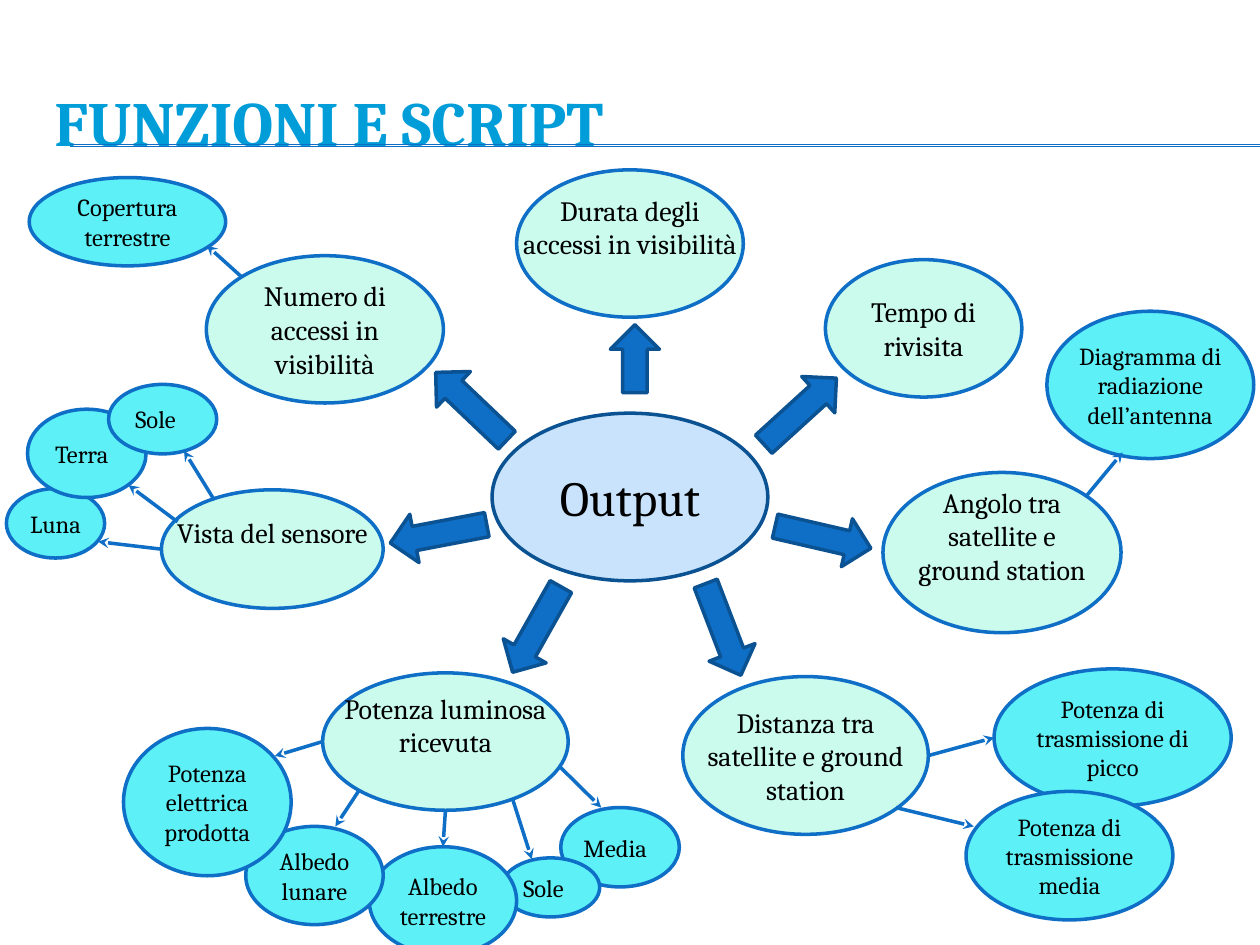
from lxml.etree import SubElement
from pptx import Presentation
from pptx.dml.color import RGBColor
from pptx.enum.shapes import MSO_CONNECTOR, MSO_SHAPE
from pptx.enum.text import MSO_ANCHOR, MSO_AUTO_SIZE, PP_ALIGN
from pptx.oxml.ns import qn
from pptx.util import Cm, Pt

FONT = "Cambria"
BLUE, NAVY = "0F6FC6", "0B5292"
TITLE = "FUNZIONI E SCRIPT"

# kind: fill, outline, text size
KINDS = {
    "hub": ("C8E3FB", NAVY, 28),
    "node": ("CAFBED", BLUE, 16),
    "leaf": ("5EF0F7", BLUE, 14),
}

# text, kind, centre x and y, width, height, label width, label lines (cm)
BUBBLES = [
    ("Luna", "leaf", 1.12, 10.55, 1.98, 1.4, 1.98, 1),
    ("Media", "leaf", 12.5, 17.08, 2.39, 1.6, 1.98, 1),
    ("Terra", "leaf", 1.75, 9.14, 2.39, 1.78, 1.78, 1),
    ("Durata degli accessi in visibilità", "node", 12.7, 4.91, 4.57, 2.97, 4.95, 3),
    ("Output", "hub", 12.7, 10.02, 5.56, 3.38, 4.78, 1),
    ("Numero di accessi in visibilità", "node", 6.55, 6.64, 4.78, 2.97, 4.57, 3),
    ("Tempo di rivisita", "node", 18.62, 6.62, 3.96, 2.77, 3.68, 2),
    ("Angolo tra satellite e ground station", "node", 20.2, 11.14, 4.8, 3.23, 4.27, 4),
    ("Distanza tra satellite e ground station", "node", 16.24, 15.23, 4.95, 3.18, 4.95, 3),
    ("Vista del sensore", "node", 5.49, 11.07, 4.47, 2.39, 4.62, 2),
    ("Potenza luminosa ricevuta", "node", 8.98, 14.95, 4.95, 2.77, 4.95, 3),
    ("Potenza di trasmissione di picco", "leaf", 22.43, 14.87, 4.78, 2.77, 4.17, 3),
    ("Sole", "leaf", 11.1, 17.89, 1.98, 1.19, 1.6, 1),
    ("Sole", "leaf", 3.28, 8.45, 2.18, 1.4, 1.6, 1),
    ("Albedo terrestre", "leaf", 8.93, 18.16, 2.97, 2.18, 3.18, 2),
    ("Albedo lunare", "leaf", 6.34, 17.65, 2.77, 1.98, 3.18, 2),
    ("Potenza di trasmissione media", "leaf", 21.56, 17.25, 4.17, 2.59, 4.17, 3),
    ("Copertura terrestre", "leaf", 2.57, 4.47, 3.96, 1.78, 3.76, 2),
    ("Diagramma di radiazione dell’antenna", "leaf", 23.19, 7.76, 4.17, 2.97, 4.29, 3),
    ("Potenza elettrica prodotta", "leaf", 4.18, 16.17, 3.38, 2.97, 3.58, 3),
]
LEFT = {"Media", "Terra", "Sole"}

# centre x and y, length, clockwise angle
ARROWS = [
    (14.58, 12.69, 1.98, 69),
    (16.59, 10.83, 1.98, 13),
    (16.13, 8.29, 1.98, 317.7),
    (12.8, 7.23, 1.37, 270),
    (9.5, 8.19, 1.98, 223.6),
    (8.84, 10.76, 1.98, 169.2),
    (10.82, 12.69, 1.98, 119.4),
]

# from x and y, to x and y
LINKS = [
    (21.89, 10.01, 22.63, 9.12),
    (18.72, 15.23, 20.04, 14.87),
    (18.06, 16.28, 19.63, 16.66),
    (4.32, 10.08, 3.71, 9.09),
    (3.58, 10.52, 2.59, 9.78),
    (3.25, 11.07, 1.98, 10.92),
    (6.5, 14.95, 5.54, 15.24),
    (7.24, 15.93, 6.76, 16.66),
    (8.98, 16.33, 8.93, 17.07),
    (10.34, 16.13, 10.72, 17.32),
    (11.3, 15.47, 12.12, 16.28),
    (4.88, 5.59, 4.17, 4.95),
]
RULES = [2.92, 2.95]


def paint(color, code):
    color.rgb = RGBColor.from_string(code)


def frame(x, y, w, h):
    """Turn a centre and a size into left, top, width and height."""
    return Cm(x - w / 2), Cm(y - h / 2), Cm(w), Cm(h)


def style(par, size, code):
    par.font.name = FONT
    par.font.size = Pt(size)
    paint(par.font.color, code)


def add_form(slide, kind, box, fill, edge):
    form = slide.shapes.add_shape(kind, *box)
    form.shadow.inherit = False
    form.fill.solid()
    paint(form.fill.fore_color, fill)
    paint(form.line.color, edge)
    form.line.width = Pt(2)
    return form


def add_line(slide, ends, width, head=False):
    line = slide.shapes.add_connector(MSO_CONNECTOR.STRAIGHT, *map(Cm, ends))
    paint(line.line.color, BLUE)
    line.line.width = Pt(width)
    if head:
        SubElement(line.line._get_or_add_ln(), qn("a:tailEnd"), type="stealth")
    SubElement(line._element.spPr, qn("a:effectLst"))


def add_bubble(slide, text, kind, x, y, w, h, span, rows):
    fill, edge, size = KINDS[kind]
    add_form(slide, MSO_SHAPE.OVAL, frame(x, y, w, h), fill, edge)
    tall = 0.25 + rows * Pt(size).cm * 1.2
    label = slide.shapes.add_textbox(*frame(x, y, span, tall)).text_frame
    label.word_wrap = True
    label.auto_size = MSO_AUTO_SIZE.SHAPE_TO_FIT_TEXT
    label.text = text
    par = label.paragraphs[0]
    par.alignment = PP_ALIGN.LEFT if text in LEFT else PP_ALIGN.CENTER
    style(par, size, "000000")


def add_title(slide):
    title = slide.shapes.title
    title.left, title.top = Cm(0.84), Cm(1.27)
    title.width, title.height = Cm(24.13), Cm(2.34)
    title.text_frame.text = TITLE
    title.text_frame.vertical_anchor = MSO_ANCHOR.MIDDLE
    par = title.text_frame.paragraphs[0]
    par.alignment = PP_ALIGN.LEFT
    par.font.bold = True
    style(par, 36, "009DD9")


def main():
    deck = Presentation()
    deck.slide_width, deck.slide_height = Cm(25.4), Cm(19.05)
    slide = deck.slides.add_slide(deck.slide_layouts[5])
    add_title(slide)
    for y in RULES:
        add_line(slide, (1.42, y, 25.4, y), 0.75)
    for bubble in BUBBLES:
        add_bubble(slide, *bubble)
    for x, y, size, angle in ARROWS:
        box = frame(x, y, size, 0.99)
        add_form(slide, MSO_SHAPE.RIGHT_ARROW, box, BLUE, NAVY).rotation = angle
    for ends in LINKS:
        add_line(slide, ends, 2, head=True)
    deck.save("out.pptx")


if __name__ == "__main__":
    main()
